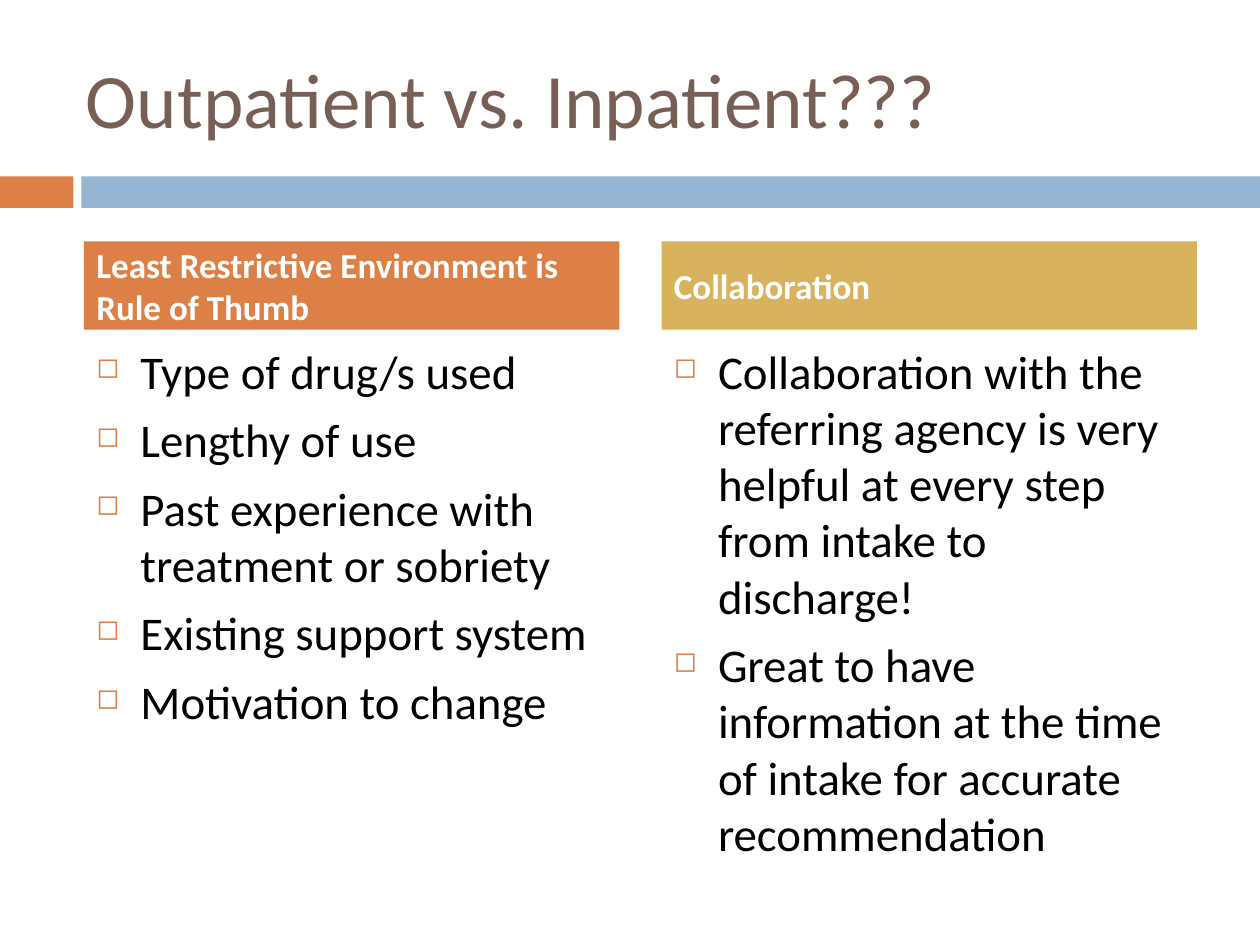
import pptx
import pptx.dml.color
import pptx.enum.shapes
import pptx.enum.text
import pptx.oxml
import pptx.oxml.ns
import pptx.util

Pt = pptx.util.Pt
ANCHOR = pptx.enum.text.MSO_ANCHOR
ORANGE, BLUE, GOLD = "DD8047", "94B6D2", "D8B25C"
BROWN, BLACK, WHITE = "775F55", "000000", "FFFFFF"


def color(code):
    return pptx.dml.color.RGBColor.from_string(code)


def mark(par):
    """Give a paragraph a hanging square bullet."""
    props = par._p.get_or_add_pPr()
    props.set("marL", str(Pt(25.2)))
    props.set("indent", str(-Pt(25.2)))
    space = pptx.oxml.ns.nsdecls("a")
    for xml in (
        f'<a:buClr {space}><a:srgbClr val="{ORANGE}"/></a:buClr>',
        f'<a:buSzPct {space} val="60000"/>',
        f'<a:buChar {space} char="◻"/>',
    ):
        props.append(pptx.oxml.parse_xml(xml))


def write(frame, lines, size, ink, bold=False, before=0, bullet=False,
          anchor=ANCHOR.TOP):
    frame.word_wrap = True
    frame.vertical_anchor = anchor
    for i, line in enumerate(lines):
        par = frame.paragraphs[0] if i == 0 else frame.add_paragraph()
        par.alignment = pptx.enum.text.PP_ALIGN.LEFT
        par.space_before = Pt(before)
        if bullet:
            mark(par)
        run = par.add_run()
        run.text = line
        font = run.font
        font.name, font.size, font.bold = "Calibri", Pt(size), bold
        font.color.rgb = color(ink)


class Page:
    def __init__(self, slide):
        self.shapes = slide.shapes

    def rect(self, box, fill):
        kind = pptx.enum.shapes.MSO_SHAPE.RECTANGLE
        shape = self.shapes.add_shape(kind, *map(Pt, box))
        shape.shadow.inherit = False
        shape.fill.solid()
        shape.fill.fore_color.rgb = color(fill)
        shape.line.fill.background()
        return shape

    def title(self, box, text):
        frame = self.shapes.add_textbox(*map(Pt, box)).text_frame
        write(frame, [text], 44, BROWN, anchor=ANCHOR.MIDDLE)

    def header(self, box, text, fill):
        write(self.rect(box, fill).text_frame, [text], 20, WHITE, bold=True,
              before=7, anchor=ANCHOR.MIDDLE)

    def bullets(self, box, items):
        frame = self.shapes.add_textbox(*map(Pt, box)).text_frame
        write(frame, items, 26.8, BLACK, before=7, bullet=True)


def main():
    deck = pptx.Presentation()
    deck.slide_width, deck.slide_height = Pt(720), Pt(540)
    page = Page(deck.slides.add_slide(deck.slide_layouts[6]))

    page.rect((0, 100.8, 42, 18), ORANGE)
    page.rect((46.5, 100.8, 673.5, 18), BLUE)
    page.title((42, 21.6, 642, 68.4), "Outpatient vs. Inpatient???")

    columns = [
        ("Least Restrictive Environment is Rule of Thumb", ORANGE, [
            "Type of drug/s used",
            "Lengthy of use",
            "Past experience with treatment or sobriety",
            "Existing support system",
            "Motivation to change",
        ]),
        ("Collaboration", GOLD, [
            "Collaboration with the referring agency is very helpful "
            "at every step from intake to discharge!",
            "Great to have information at the time of intake "
            "for accurate recommendation",
        ]),
    ]
    wide, gap = 306, 24
    for i, (head, fill, items) in enumerate(columns):
        left = 48 + i * (wide + gap)
        page.header((left, 138, wide, 50.4), head, fill)
        page.bullets((left, 192, wide, 282), items)

    deck.save("out.pptx")


if __name__ == "__main__":
    main()
